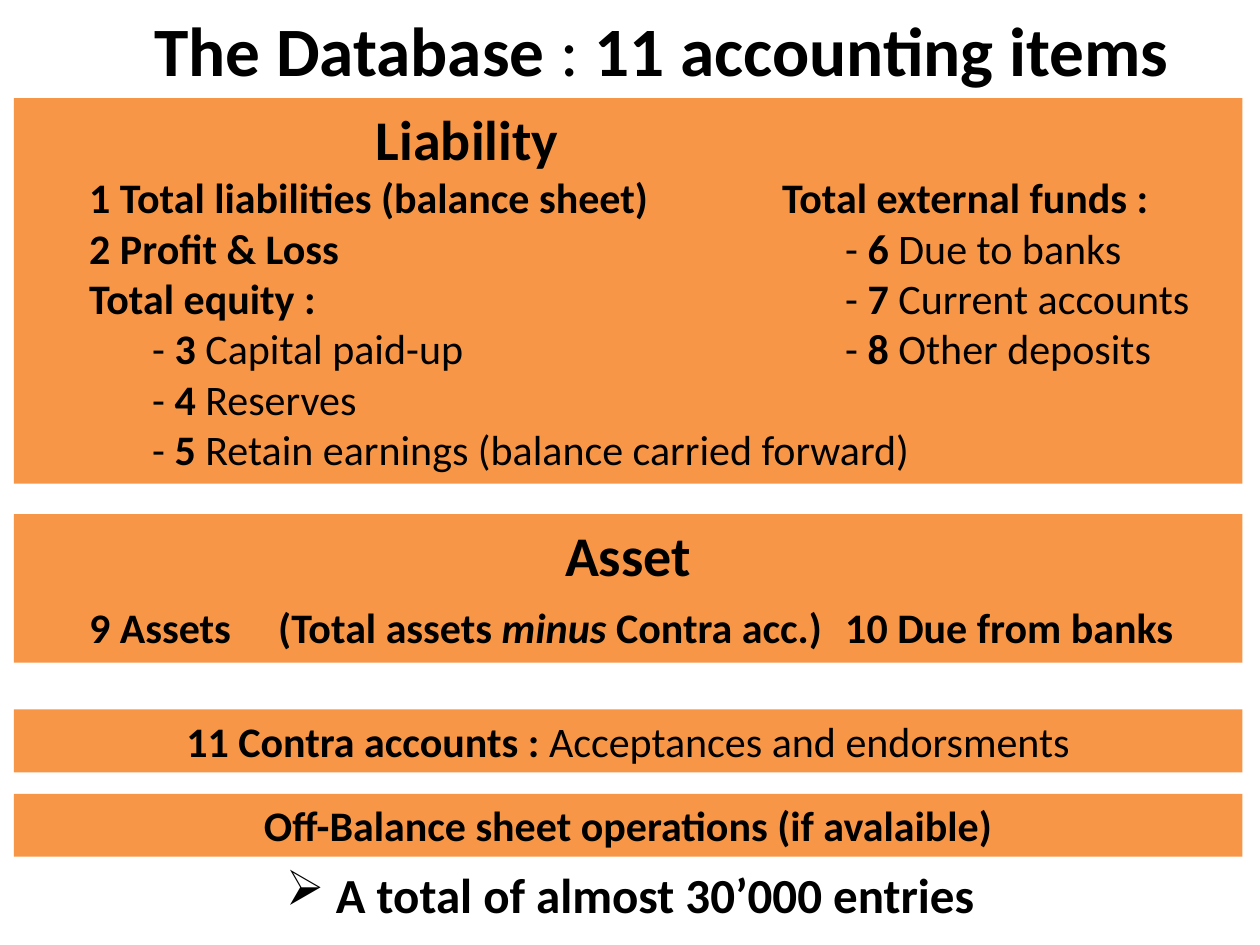
from typing import NamedTuple

from lxml import etree
from pptx import Presentation
from pptx.dml.color import RGBColor
from pptx.enum.shapes import MSO_SHAPE
from pptx.enum.text import MSO_ANCHOR, PP_ALIGN
from pptx.oxml.ns import qn
from pptx.util import Inches, Pt

RECT = MSO_SHAPE.RECTANGLE
TOP, MIDDLE = MSO_ANCHOR.TOP, MSO_ANCHOR.MIDDLE
LEFT, CENTER = PP_ALIGN.LEFT, PP_ALIGN.CENTER
FONT = "Calibri"
INK, ORANGE = "000000", "F79646"
COL, SUB, FUNDS, BANKS = 0.5, 1.0, 6.0, 6.5


class Run(NamedTuple):
    text: str
    bold: bool = True
    slant: bool = False


class Line(NamedTuple):
    runs: list[Run]
    size: float = 24
    align: PP_ALIGN = LEFT
    stops: tuple[float, ...] = ()
    kind: str = "l"
    space: float = 0
    mark: str = ""


class Panel(NamedTuple):
    top: float
    height: float
    lines: list[Line]


def color(code: str) -> RGBColor:
    return RGBColor.from_string(code)


def add_mark(para, mark: str) -> None:
    props = para._p.get_or_add_pPr()
    props.set("marL", str(Inches(0.31)))
    props.set("indent", str(-Inches(0.31)))
    etree.SubElement(props, qn("a:buChar"), char=mark)


def add_stops(para, stops: tuple[float, ...], kind: str) -> None:
    tabs = etree.SubElement(para._p.get_or_add_pPr(), qn("a:tabLst"))
    for stop in stops:
        etree.SubElement(tabs, qn("a:tab"), pos=str(Inches(stop)), algn=kind)


def write(frame, lines: list[Line], anchor: MSO_ANCHOR = TOP) -> None:
    frame.word_wrap = True
    frame.vertical_anchor = anchor
    for i, line in enumerate(lines):
        para = frame.add_paragraph() if i else frame.paragraphs[0]
        para.alignment = line.align
        if line.space:
            para.space_before = Pt(line.space)
        if line.mark:
            add_mark(para, line.mark)
        if line.stops:
            add_stops(para, line.stops, line.kind)
        for item in line.runs:
            run = para.add_run()
            run.text = item.text
            font = run.font
            font.name, font.size = FONT, Pt(line.size)
            font.bold, font.italic = item.bold, item.slant
            font.color.rgb = color(INK)


def draw(slide, panel: Panel) -> None:
    box = slide.shapes.add_shape(
        RECT, Inches(0.11), Inches(panel.top), Inches(9.75), Inches(panel.height))
    box.shadow.inherit = False
    box.fill.solid()
    box.fill.fore_color.rgb = color(ORANGE)
    box.line.fill.background()
    write(box.text_frame, panel.lines)


def entry(num: str, name: str, lead: str = "\t") -> list[Run]:
    return [Run(f"{lead}- ", False), Run(f"{num} "), Run(name, False)]


TITLE = Line([Run("The Database "), Run(": ", False), Run("11 accounting items")],
             39.6, CENTER)
TOTAL = Line([Run(" A total of almost 30’000 entries")], 28, CENTER, mark="➢")
PANELS = [
    Panel(0.78, 3.06, [
        Line([Run("\tLiability")], 32, stops=(3.5,), kind="ctr"),
        Line([Run("\t1 Total liabilities (balance sheet)\tTotal external funds :")],
             stops=(COL, FUNDS)),
        Line([Run("\t2 Profit & Loss"), *entry("6", "Due to banks")],
             stops=(COL, BANKS)),
        Line([Run("\tTotal equity : "), *entry("7", "Current accounts")],
             stops=(COL, BANKS)),
        Line([*entry("3", "Capital paid-up"), *entry("8", "Other deposits")],
             stops=(SUB, BANKS)),
        Line(entry("4", "Reserves"), stops=(SUB,)),
        Line(entry("5", "Retain earnings (balance carried forward)"), stops=(SUB,)),
    ]),
    Panel(4.08, 1.18, [
        Line([Run("Asset")], 32, CENTER),
        Line([Run("\t9 Assets \t(Total assets "), Run("minus", slant=True),
              Run(" Contra acc.) \t10 Due from banks")],
             stops=(COL, 2, BANKS), space=8),
    ]),
    Panel(5.63, 0.5, [
        Line([Run("11 Contra accounts : "), Run("Acceptances and endorsments", False)],
             align=CENTER),
    ]),
    Panel(6.3, 0.5, [
        Line([Run("Off-Balance sheet operations (if avalaible)")], align=CENTER),
    ]),
]


def main() -> None:
    deck = Presentation()
    deck.slide_width, deck.slide_height = Inches(10), Inches(7.5)
    slide = deck.slides.add_slide(deck.slide_layouts[5])
    title = slide.shapes.title
    title.left, title.top = Inches(0.5), Inches(0)
    title.width, title.height = Inches(9.5), Inches(0.78)
    write(title.text_frame, [TITLE], MIDDLE)
    for panel in PANELS:
        draw(slide, panel)
    foot = slide.shapes.add_textbox(
        Inches(0), Inches(6.81), Inches(10), Inches(0.57))
    write(foot.text_frame, [TOTAL])
    deck.save("out.pptx")


if __name__ == "__main__":
    main()
